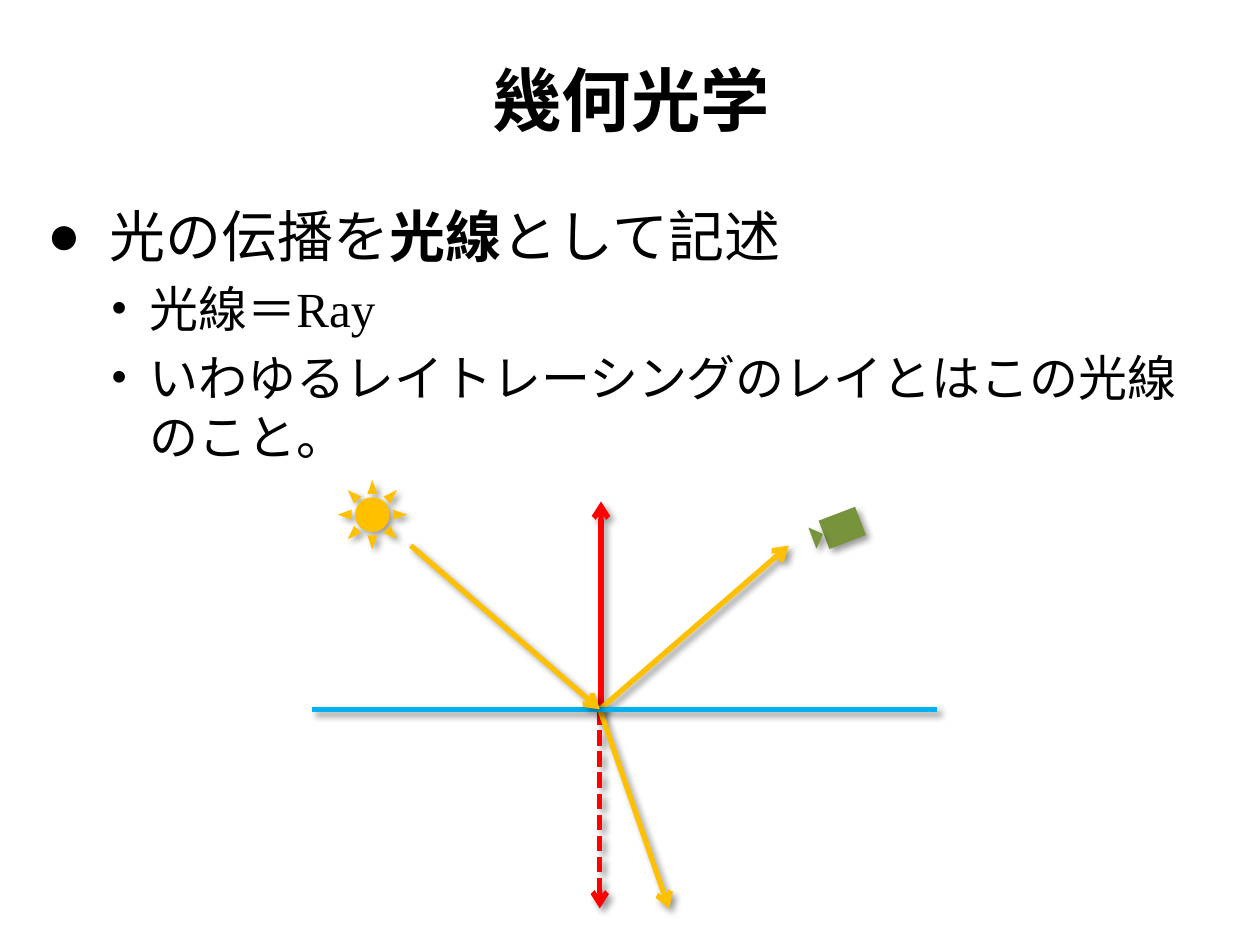
from lxml import etree
from pptx import Presentation
from pptx.dml.color import RGBColor
from pptx.enum.dml import MSO_LINE
from pptx.enum.shapes import MSO_CONNECTOR, MSO_SHAPE
from pptx.enum.text import MSO_ANCHOR, PP_ALIGN
from pptx.oxml.ns import qn
from pptx.util import Inches, Pt

STRAIGHT = MSO_CONNECTOR.STRAIGHT
SUN = MSO_SHAPE.SUN
RECT = MSO_SHAPE.RECTANGLE
WEDGE = MSO_SHAPE.ISOSCELES_TRIANGLE
DASH = MSO_LINE.SQUARE_DOT
MIDDLE = MSO_ANCHOR.MIDDLE
TOP = MSO_ANCHOR.TOP
CENTER = PP_ALIGN.CENTER
LEFT = PP_ALIGN.LEFT

BLACK, RED, GOLD, BLUE, GREEN = "000000", "FF0000", "FFC000", "00B0F0", "77933C"


def color(code):
    """Turn a hex string into a colour."""
    return RGBColor.from_string(code)


def node(root, tag, **attrs):
    """Add an XML child with the given attributes."""
    return etree.SubElement(root, qn(tag), {key: str(val) for key, val in attrs.items()})


def write(para, text, size=28, font="Times New Roman", bold=False, ink=BLACK):
    """Add a run of text in the given format."""
    run = para.add_run()
    run.text = text
    run.font.size = Pt(size)
    run.font.name = font
    run.font.bold = bold
    run.font.color.rgb = color(ink)


class Board:
    """Hold the style and the current slide."""

    width = Pt(3)
    blur = Pt(4)
    drop = Pt(3)

    def __init__(self, slide):
        """Keep the slide to draw on."""
        self.slide = slide

    def shade(self, item):
        """Give a shape or line the soft shadow."""
        effects = node(item._element.spPr, "a:effectLst")
        outer = node(effects, "a:outerShdw", blurRad=self.blur, dist=self.drop,
                     dir=45 * 60000, algn="tl", rotWithShape=0)
        node(node(outer, "a:srgbClr", val=BLACK), "a:alpha", val=40000)

    def line(self, start, end, ink, head=True, dash=None):
        """Draw a line or an arrow."""
        x, y = start
        u, v = end
        item = self.slide.shapes.add_connector(
            STRAIGHT, Inches(x), Inches(y), Inches(u), Inches(v))
        item.line.color.rgb = color(ink)
        item.line.width = self.width
        if dash:
            item.line.dash_style = dash
        if head:
            node(item.line._get_or_add_ln(), "a:tailEnd", type="arrow")
        self.shade(item)

    def shape(self, kind, box, ink, turn=0):
        """Draw a filled preset shape."""
        item = self.slide.shapes.add_shape(kind, *map(Inches, box))
        item.fill.solid()
        item.fill.fore_color.rgb = color(ink)
        item.line.fill.background()
        item.rotation = turn
        self.shade(item)

    def text(self, box, anchor=TOP):
        """Add a wrapping text box and return its frame."""
        frame = self.slide.shapes.add_textbox(*map(Inches, box)).text_frame
        frame.word_wrap = True
        frame.vertical_anchor = anchor
        return frame

    def bullet(self, para, mark, left, hang, level=0):
        """Set a bullet with a hanging indent."""
        para.alignment = LEFT
        para.level = level
        props = para._p.get_or_add_pPr()
        props.set("marL", str(Inches(left)))
        props.set("indent", str(-Inches(hang)))
        node(props, "a:buFont", typeface="Times New Roman")
        node(props, "a:buChar", char=mark)


def main():
    """Build and save the slide."""
    deck = Presentation()
    deck.slide_width, deck.slide_height = Inches(10), Inches(7.5)
    board = Board(deck.slides.add_slide(deck.slide_layouts[6]))

    hit = (4.76, 5.63)
    board.line(hit, (4.76, 7.21), RED, dash=DASH)
    board.line((4.77, 5.63), (4.77, 3.98), RED)
    board.line(hit, (5.31, 7.21), GOLD)

    title = board.text((0.51, 0.44, 9, 0.68), MIDDLE).paragraphs[0]
    title.alignment = CENTER
    write(title, "幾何光学", size=39.6, font="Karla", bold=True)

    body = board.text((0.28, 1.55, 9.22, 2.28))
    lead = body.paragraphs[0]
    board.bullet(lead, "●", 0.49, 0.49)
    for part, bold in (("光の伝播を", False), ("光線", True), ("として記述", False)):
        write(lead, part, size=32, bold=bold)
    for note in ("光線＝Ray", "いわゆるレイトレーシングのレイとはこの光線のこと。"):
        para = body.add_paragraph()
        para.space_before = Pt(5.6)
        board.bullet(para, "•", 0.81, 0.31, level=1)
        write(para, note)

    board.line(hit, (6.26, 4.33), GOLD)
    board.line((2.48, 5.63), (7.44, 5.63), BLUE, head=False)
    board.line((3.26, 4.33), hit, GOLD)

    board.shape(SUN, (2.68, 3.81, 0.55, 0.55), GOLD)
    board.shape(RECT, (6.53, 4.07, 0.31, 0.24), GREEN, turn=339.1)
    board.shape(WEDGE, (6.4, 4.21, 0.18, 0.09), GREEN, turn=69.1)

    deck.save("out.pptx")


if __name__ == "__main__":
    main()
